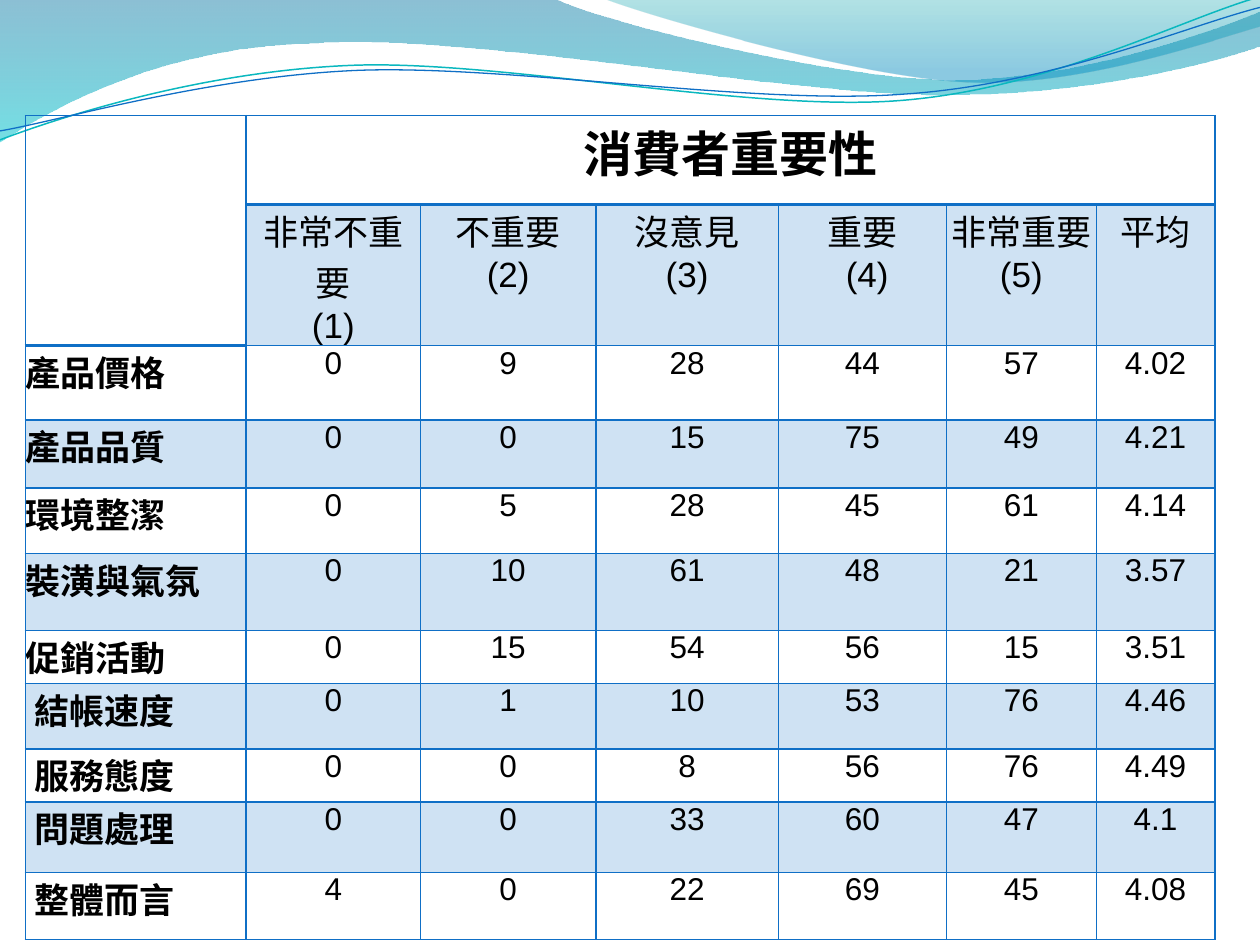
from math import cos, radians, sin

from lxml.etree import SubElement
from pptx import Presentation
from pptx.dml.color import RGBColor
from pptx.enum.text import PP_ALIGN as Align
from pptx.oxml.ns import qn
from pptx.util import Cm, Pt

BLUE = "0F6FC6"
COL_WIDTHS = [4.45, 3.52, 3.53, 3.68, 3.39, 3.02, 2.39]
ROW_HEIGHTS = [1.8, 1.98, 1.5, 1.37, 1.32, 1.55, 1.07, 1.32, 1.07, 1.42, 1.35]
HEADERS = ["非常不重要\n(1)", "不重要\n(2)", "沒意見\n(3)", "重要\n (4)", "非常重要\n(5)", "平均"]
RATINGS = [
    ("產品價格", 0, 9, 28, 44, 57, 4.02),
    ("產品品質", 0, 0, 15, 75, 49, 4.21),
    ("環境整潔", 0, 5, 28, 45, 61, 4.14),
    ("裝潢與氣氛", 0, 10, 61, 48, 21, 3.57),
    ("促銷活動", 0, 15, 54, 56, 15, 3.51),
    ("結帳速度", 0, 1, 10, 53, 76, 4.46),
    ("服務態度", 0, 0, 8, 56, 76, 4.49),
    ("問題處理", 0, 0, 33, 60, 47, 4.1),
    ("整體而言", 4, 0, 22, 69, 45, 4.08),
]
FLUSH_LABELS = 5

WIDE_WAVE = [
    (0, 0), (11.18, -0.03),
    (12.09, 0.43, 16.87, 1.6, 19.25, 1.6), (21.67, 1.6, 24.33, 0.66, 25.4, 0.23),
    (25.43, 0.91),
    (24.97, 1.12, 22.1, 1.93, 18.95, 1.91), (15.8, 1.91, 9.7, 0.71, 6.53, 0.86),
    (3.28, 0.91, 1.17, 2.11, -0.03, 2.87),
]
RIGHT_WAVE = [
    (12.17, -0.03),
    (12.93, 0.28, 17.32, 1.57, 19.53, 1.65), (21.74, 1.75, 24.41, 0.81, 25.4, 0.53),
    (25.4, 0),
]
TEAL_LINE = [
    (0, 2.82), (1.22, 2.36, 4.01, 1.45, 7.04, 1.32),
    (10.03, 1.19, 15.06, 2.26, 18.11, 2.03), (21.16, 1.8, 23.83, 0.38, 25.35, -0.05),
]
BLUE_LINE = [
    (0, 2.64), (1.19, 2.44, 4.17, 1.55, 7.19, 1.42),
    (10.24, 1.3, 15.16, 2.13, 18.21, 1.9), (21.23, 1.7, 23.9, 0.53, 25.4, 0.15),
]


def rgb(color):
    return RGBColor.from_string(color)


def set_alpha(clr, percent):
    SubElement(clr, qn("a:alpha"), val=str(percent * 1000))


def turn(segments, center, degrees):
    cx, cy = center
    c, s = cos(radians(degrees)), sin(radians(degrees))
    turned = []
    for seg in segments:
        pairs = zip(seg[::2], seg[1::2])
        turned.append(sum(((cx + (x - cx) * c - (y - cy) * s, cy + (x - cx) * s + (y - cy) * c)
                           for x, y in pairs), ()))
    return turned


class SlideBuilder:
    """Draw waves and a bordered table on one slide in a shared style."""

    font = "Arial"
    text_color = "000000"

    def __init__(self, s):
        self.s = s

    def outline(self, segments, close):
        start, *rest = [(Cm(x), Cm(y)) for seg in segments for x, y in zip(seg[::2], seg[1::2])]
        builder = self.s.shapes.build_freeform(*start)
        builder.add_line_segments(rest, close=close)
        sp = builder.convert_to_shape()
        sp.shadow.inherit = False
        lines = iter(list(sp._element.iter(qn("a:lnTo"))))
        for seg in segments[1:]:
            first = next(lines)
            if len(seg) == 6:
                first.tag = qn("a:cubicBezTo")
                for _ in range(2):
                    extra = next(lines)
                    first.append(extra[0])
                    extra.getparent().remove(extra)
        return sp

    def wave(self, segments, stops):
        sp = self.outline(segments, True)
        sp.line.fill.background()
        sp.fill.gradient()
        sp.fill.gradient_angle = 270
        for stop, (position, color, _) in zip(sp.fill.gradient_stops, stops):
            stop.position = position
            stop.color.rgb = rgb(color)
        for gs, (_, _, percent) in zip(sp._element.iter(qn("a:gs")), stops):
            set_alpha(gs[0], percent)

    def curve(self, segments, center, color, width, tilt=-2.7):
        sp = self.outline(turn(segments, center, -tilt), False)
        sp.rotation = tilt
        sp.fill.background()
        sp.line.color.rgb = rgb(color)
        sp.line.width = Pt(width)

    def table(self, left, top, widths, heights):
        frame = self.s.shapes.add_table(
            len(heights), len(widths), Cm(left), Cm(top), Cm(sum(widths)), Cm(sum(heights)))
        table = frame.table
        table.first_row = table.horz_banding = False
        for col, width in zip(table.columns, widths):
            col.width = Cm(width)
        for row, height in zip(table.rows, heights):
            row.height = Cm(height)
        return table

    def frame_cell(self, cell, banded=False, bottom=1, top=1):
        tc_pr = cell._tc.get_or_add_tcPr()
        for side, width in (("L", 1), ("R", 1), ("T", top), ("B", bottom)):
            ln = SubElement(tc_pr, qn(f"a:ln{side}"), w=str(Pt(width)))
            fill = SubElement(ln, qn("a:solidFill"))
            SubElement(fill, qn("a:srgbClr"), val=BLUE)
        if banded:
            cell.fill.solid()
            cell.fill.fore_color.rgb = rgb(BLUE)
            set_alpha(tc_pr.find(qn("a:solidFill"))[0], 20)
        else:
            cell.fill.background()

    def write_cell(self, cell, text, size, bold=False, align=Align.CENTER, inset=0.18):
        cell.margin_left = cell.margin_right = Cm(inset)
        cell.margin_top = cell.margin_bottom = 0
        tf = cell.text_frame
        tf.text = text
        for p in tf.paragraphs:
            p.alignment = align
            p.font.name = self.font
            p.font.size = Pt(size)
            p.font.bold = bold
            p.font.color.rgb = rgb(self.text_color)


def main():
    prs = Presentation()
    prs.slide_width, prs.slide_height = Cm(25.4), Cm(19.05)
    b = SlideBuilder(prs.slides.add_slide(prs.slide_layouts[6]))

    b.wave(WIDE_WAVE, [(0, "0074A1", 45), (1, "00C6CF", 55)])
    b.wave(RIGHT_WAVE, [(0, "00A1A9", 30), (0.8, "008BBF", 45)])
    b.curve(TEAL_LINE, (12.68, 1.46), "0AB8BF", 0.85)
    b.curve(BLUE_LINE, (12.69, 1.5), BLUE, 0.75)

    table = b.table(0.51, 2.33, COL_WIDTHS, ROW_HEIGHTS)
    table.cell(0, 0).merge(table.cell(1, 0))
    table.cell(0, 1).merge(table.cell(0, 6))
    for row in range(len(ROW_HEIGHTS)):
        for col in range(len(COL_WIDTHS)):
            corner = row < 2 and col == 0
            b.frame_cell(
                table.cell(row, col),
                banded=row % 2 == 1 and not corner,
                bottom=2 if row == 0 or corner else 1,
                top=2 if (row == 1 and col) or (row == 2 and col == 0) else 1)

    b.write_cell(table.cell(0, 1), "消費者重要性", 28, bold=True)
    for col, header in enumerate(HEADERS, 1):
        b.write_cell(table.cell(1, col), header, 20, inset=0)
    for i, (label, *values) in enumerate(RATINGS):
        b.write_cell(table.cell(i + 2, 0), label, 20, bold=True, align=Align.LEFT,
                     inset=0 if i < FLUSH_LABELS else 0.18)
        for col, value in enumerate(values, 1):
            b.write_cell(table.cell(i + 2, col), str(value), 18)

    prs.save("out.pptx")


if __name__ == "__main__":
    main()
